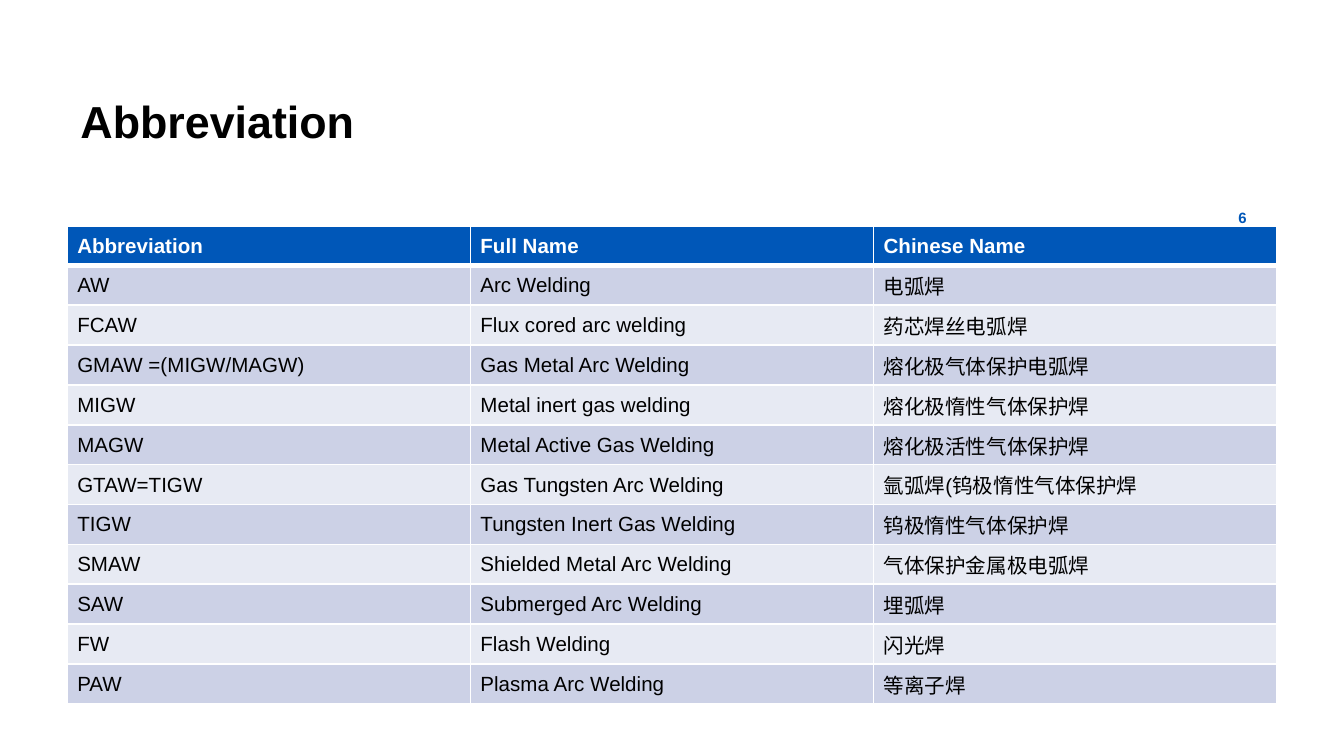
from lxml import etree
from pptx import Presentation
from pptx.dml.color import RGBColor
from pptx.enum.text import MSO_ANCHOR, PP_ALIGN
from pptx.oxml.ns import qn
from pptx.util import Pt

LEFT, CENTER = PP_ALIGN.LEFT, PP_ALIGN.CENTER
MIDDLE = MSO_ANCHOR.MIDDLE
PX = 4572
FONT = "Arial"
BLUE, WHITE, BLACK = "0057B8", "FFFFFF", "000000"
BANDS = ("E7EAF3", "CCD1E6")

TITLE = "Abbreviation"
PAGE = "6"
ROWS = [
    ("Abbreviation", "Full Name", "Chinese Name"),
    ("AW", "Arc Welding", "电弧焊"),
    ("FCAW", "Flux cored arc welding", "药芯焊丝电弧焊"),
    ("GMAW =(MIGW/MAGW)", "Gas Metal Arc Welding", "熔化极气体保护电弧焊"),
    ("MIGW", "Metal inert gas welding", "熔化极惰性气体保护焊"),
    ("MAGW", "Metal Active Gas Welding", "熔化极活性气体保护焊"),
    ("GTAW=TIGW", "Gas Tungsten Arc Welding", "氩弧焊(钨极惰性气体保护焊"),
    ("TIGW", "Tungsten Inert Gas Welding", "钨极惰性气体保护焊"),
    ("SMAW", "Shielded Metal Arc Welding", "气体保护金属极电弧焊"),
    ("SAW", "Submerged Arc Welding", "埋弧焊"),
    ("FW", "Flash Welding", "闪光焊"),
    ("PAW", "Plasma Arc Welding", "等离子焊"),
]
COL, ROW = 600, 58


def px(*vals):
    return [val * PX for val in vals]


def color(code):
    return RGBColor.from_string(code)


def write(frame, text, size=11, ink=BLACK, bold=False, align=LEFT):
    para = frame.paragraphs[0]
    para.alignment = align
    run = para.add_run()
    run.text = text
    run.font.name = FONT
    run.font.size = Pt(size)
    run.font.bold = bold
    run.font.color.rgb = color(ink)


def label(slide, text, box, pad, **form):
    frame = slide.shapes.add_textbox(*px(*box)).text_frame
    frame.word_wrap = True
    frame.vertical_anchor = MIDDLE
    frame.margin_left, frame.margin_right = px(pad, pad)
    frame.margin_top = frame.margin_bottom = 0
    write(frame, text, **form)


def border(cell, widths):
    props = cell._tc.get_or_add_tcPr()
    for spot, (side, width) in enumerate(zip("LRTB", widths)):
        line = etree.Element(qn(f"a:ln{side}"), w=str(Pt(width)))
        fill = etree.SubElement(line, qn("a:solidFill"))
        etree.SubElement(fill, qn("a:srgbClr"), val=WHITE)
        props.insert(spot, line)


def grid(slide, left, top):
    rows, cols = len(ROWS), len(ROWS[0])
    box = px(left, top, cols * COL, rows * ROW)
    table = slide.shapes.add_table(rows, cols, *box).table
    for col in table.columns:
        col.width = COL * PX
    for r, names in enumerate(ROWS):
        table.rows[r].height = ROW * PX
        head = r == 0
        for c, name in enumerate(names):
            cell = table.cell(r, c)
            cell.vertical_anchor = MIDDLE
            cell.margin_left, cell.margin_right = px(15, 15)
            cell.margin_top, cell.margin_bottom = px(8, 7)
            cell.fill.solid()
            cell.fill.fore_color.rgb = color(BLUE if head else BANDS[r % 2])
            border(cell, (1, 1, 3 if r == 1 else 1, 3 if head else 1))
            write(cell.text_frame, name, ink=WHITE if head else BLACK, bold=head)


def main():
    deck = Presentation()
    deck.slide_width, deck.slide_height = px(2000, 1125)
    slide = deck.slides.add_slide(deck.slide_layouts[6])
    grid(slide, 100, 337)
    label(slide, TITLE, (100, 101, 1670, 156), 20, size=24, bold=True)
    label(slide, PAGE, (1798, 311, 102, 26), 0, size=8, ink=BLUE, bold=True, align=CENTER)
    deck.save("out.pptx")


if __name__ == "__main__":
    main()
